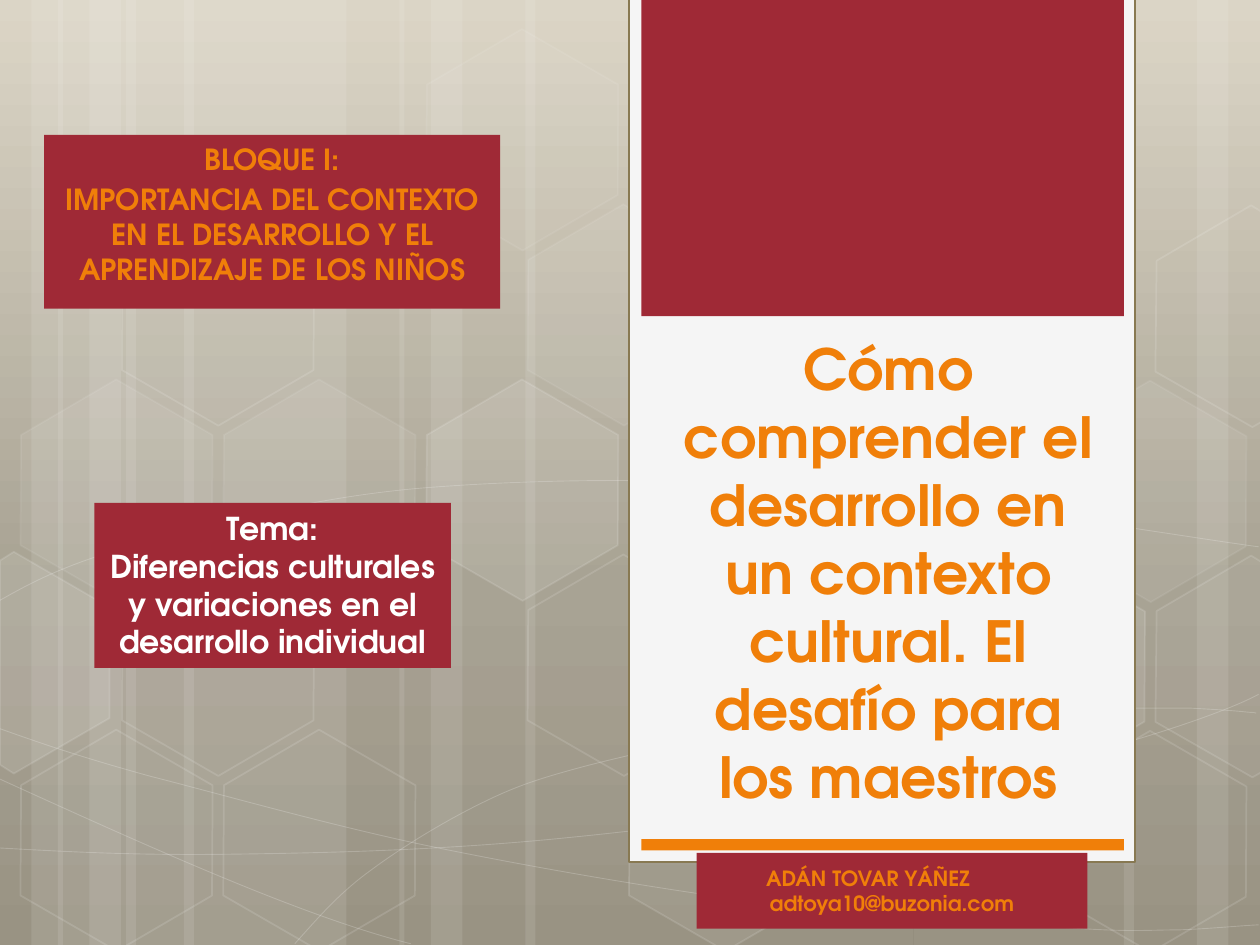
from copy import deepcopy

from pptx import Presentation
from pptx.dml.color import RGBColor
from pptx.enum.shapes import MSO_SHAPE
from pptx.enum.text import MSO_ANCHOR, PP_ALIGN
from pptx.oxml.ns import qn
from pptx.util import Inches, Pt

RECT, HEXAGON = MSO_SHAPE.RECTANGLE, MSO_SHAPE.HEXAGON
TOP, MIDDLE, BOTTOM = MSO_ANCHOR.TOP, MSO_ANCHOR.MIDDLE, MSO_ANCHOR.BOTTOM
CENTER = PP_ALIGN.CENTER
FONT = "TeX Gyre Adventor"
C = {"white": "FFFFFF", "panel": "F5F5F5", "border": "887952",
     "red": "9F2936", "orange": "F07F09"}
BACKGROUND = [(0, "D8D1C0"), (0.62, "9F9988"), (1, "8E8776")]

# (left, width) of the vertical light bars
BARS = [(1, 1.75), (0, 0.5), (0.25, 0.83), (1.46, 1.75), (0.46, 0.5), (0.71, 0.83),
        (7.25, 1.75), (9.5, 0.5), (8.92, 0.83), (4.17, 3.08), (3.17, 0.5), (3.42, 0.83)]

# Start point, then Bezier segments of two control points and an end point
CURVES = [
    [(-0.01, 6.73), (0.53, 6.76), (1.07, 6.79), (1.82, 6.78), (2.57, 6.77), (3.49, 6.75),
     (4.49, 6.65), (5.5, 6.55), (6.92, 6.36), (7.83, 6.17), (8.75, 5.98), (9.68, 5.68),
     (9.99, 5.51)],
    [(-0.01, 4.77), (0.27, 4.61), (0.56, 4.46), (1.13, 4.31), (1.7, 4.16), (2.5, 3.94),
     (3.39, 3.87), (4.28, 3.8), (5.35, 3.79), (6.45, 3.87), (7.55, 3.95), (9.39, 4.26),
     (9.99, 4.34)],
    [(-0.03, 6.17), (1.18, 6.72), (2.39, 7.27), (3.26, 7.49)],
    [(-0.01, 5.78), (0.3, 5.89), (0.61, 6), (1.19, 6.16), (1.78, 6.31), (2.65, 6.56),
     (3.48, 6.73), (4.31, 6.9), (5.37, 7.08), (6.19, 7.18), (7.02, 7.29), (7.91, 7.33),
     (8.44, 7.36), (8.97, 7.4), (9.11, 7.38), (9.36, 7.38), (9.62, 7.37), (9.8, 7.35),
     (9.99, 7.34)],
    [(2.34, 7.49), (2.52, 7.29), (2.69, 7.09), (2.94, 6.91), (3.18, 6.73), (3.51, 6.53),
     (3.79, 6.39), (4.07, 6.25), (4.24, 6.19), (4.61, 6.09), (4.98, 5.99), (5.65, 5.85),
     (6, 5.78), (6.35, 5.71), (6.4, 5.71), (6.71, 5.69), (7.02, 5.66), (7.51, 5.63),
     (7.86, 5.62), (8.2, 5.61), (8.78, 5.62), (8.78, 5.62), (9, 5.62), (9.22, 5.62),
     (9.44, 5.62), (9.63, 5.63), (9.79, 5.64), (9.88, 5.65), (9.97, 5.66), (9.94, 5.65),
     (9.97, 5.66)],
]

# (column, row, fill opacity, line opacity) on the honeycomb
LEFT_CELLS = [(2, 2, 10, 12), (2.5, 3, 0, 12), (2.5, 1, 7, 8), (2, 0, 4, 8),
              (3, 4, 6, 12), (0, 4, 0, 12), (0, 2, 7, 8), (0.5, 3, 0, 12),
              (1, 4, 0, 12), (1, 2, 7, 8), (0.5, 1, 0, 12)]
RIGHT_CELLS = [(0, 3, 10, 12), (0.5, 4, 0, 12), (0.5, 2, 7, 8)]

# Cells cut by the slide edge: (points, fill opacity)
LEFT_CUT = [(0, 4.45), (0.11, 4.38), (0.87, 4.82), (0.87, 5.7), (0.11, 6.14), (0, 6.07)]
RIGHT_CUT = [(9.18, 2.07), (9.93, 1.63), (10.01, 1.68), (10.01, 3.35), (9.94, 3.39),
             (9.17, 2.95)]
CUT_CELLS = [(LEFT_CUT, 10), ([(x, y + 2.78) for x, y in RIGHT_CUT], 4), (RIGHT_CUT, 0)]


def set_opacity(fill, percent):
    color = fill._xPr.find(qn("a:solidFill"))[0]
    alpha = color.makeelement(qn("a:alpha"), {"val": str(percent * 1000)})
    color.append(alpha)


def style(sp, fill=None, fill_alpha=100, line=None, width=1, line_alpha=100):
    sp.shadow.inherit = False
    for part, color, alpha in ((sp.fill, fill, fill_alpha),
                               (sp.line.fill, line, line_alpha)):
        if color is None or alpha == 0:
            part.background()
            continue
        part.solid()
        part.fore_color.rgb = RGBColor.from_string(color)
        if alpha < 100:
            set_opacity(part, alpha)
    if line:
        sp.line.width = Pt(width)


def add_shape(s, kind, x, y, w, h, **fmt):
    sp = s.shapes.add_shape(kind, Inches(x), Inches(y), Inches(w), Inches(h))
    style(sp, **fmt)
    return sp


def add_outline(s, points, close, **fmt):
    points = [(Inches(x), Inches(y)) for x, y in points]
    builder = s.shapes.build_freeform(*points[0])
    builder.add_line_segments(points[1:], close=close)
    sp = builder.convert_to_shape()
    style(sp, **fmt)
    return sp


def add_curve(s, points, **fmt):
    """Draw an open outline, each three points after the first being one Bezier."""
    outline = add_outline(s, points, False, **fmt)._element.find(".//" + qn("a:path"))
    lines = outline.findall(qn("a:lnTo"))
    for i in range(0, len(lines), 3):
        bezier = outline.makeelement(qn("a:cubicBezTo"), {})
        for line in lines[i:i + 3]:
            bezier.append(line[0])
            outline.remove(line)
        outline.append(bezier)


def write(sp, *lines, size, color, anchor=TOP, before=0):
    tf = sp.text_frame
    tf.word_wrap = True
    tf.vertical_anchor = anchor
    for i, text in enumerate(lines):
        p = tf.add_paragraph() if i else tf.paragraphs[0]
        p.alignment = CENTER
        p.space_before = Pt(before)
        r = p.add_run()
        r.text = text
        r.font.name, r.font.size, r.font.bold = FONT, Pt(size), True
        r.font.color.rgb = RGBColor.from_string(color)
    return tf


def add_background(s):
    fill = s.background.fill
    fill.gradient()
    fill.gradient_angle = 270
    stops = s._element.find(".//" + qn("a:gsLst"))
    stops.append(deepcopy(stops[-1]))
    for stop, (position, color) in zip(fill.gradient_stops, BACKGROUND):
        stop.position = position
        stop.color.rgb = RGBColor.from_string(color)


def add_honeycomb(s, x, y, cells):
    for col, row, fill_alpha, line_alpha in cells:
        sp = add_shape(s, HEXAGON, x + 1.61 * col, y + 1.39 * row, 1.75, 1.52,
                       fill=C["white"], fill_alpha=fill_alpha,
                       line=C["white"], line_alpha=line_alpha)
        sp.adjustments[0] = 0.285
        sp.rotation = 30


def add_decoration(s, height):
    for x, w in BARS:
        add_shape(s, RECT, x, 0, w, height, fill=C["white"], fill_alpha=10)
    for curve in CURVES:
        add_curve(s, curve, line=C["white"], width=0.5, line_alpha=20)
    add_honeycomb(s, 0.05, 0.35, LEFT_CELLS)
    add_honeycomb(s, 7.45, 0.36, RIGHT_CELLS)
    for points, alpha in CUT_CELLS:
        add_outline(s, points, True, fill=C["white"], fill_alpha=alpha,
                    line=C["white"], line_alpha=12)


def add_title_panel(s, x, y, w, h):
    add_shape(s, RECT, x, y, w, h, fill=C["panel"], line=C["border"], width=1.25)
    add_shape(s, RECT, x + 0.1, y, w - 0.19, 2.53, fill=C["red"])
    add_shape(s, RECT, x + 0.1, y + h - 0.18, w - 0.19, 0.09, fill=C["orange"])
    title = s.shapes.add_textbox(Inches(x + 0.25), Inches(y + 2.75),
                                 Inches(w - 0.4), Inches(3.75))
    write(title, "Cómo comprender el desarrollo en un contexto cultural. "
          "El desafío para los maestros", size=32.4, color=C["orange"], anchor=BOTTOM)


def add_label(s, x, y, w, h, *lines, **fmt):
    return write(add_shape(s, RECT, x, y, w, h, fill=C["red"]), *lines, **fmt)


def main():
    prs = Presentation()
    prs.slide_width, prs.slide_height = Inches(10), Inches(7.5)
    s = prs.slides.add_slide(prs.slide_layouts[6])
    add_background(s)
    add_decoration(s, 7.5)
    add_title_panel(s, 4.99, -0.02, 4.02, 6.86)
    add_label(s, 0.35, 1.07, 3.62, 1.38, "BLOQUE I:",
              "IMPORTANCIA DEL CONTEXTO EN EL DESARROLLO Y EL APRENDIZAJE DE LOS NIÑOS",
              size=16.6, color=C["orange"], before=3.3)
    author = add_label(s, 5.53, 6.77, 3.1, 0.6, "ADÁN TOVAR YÁÑEZ", "adtoya10@buzonia.com",
                       size=12, color=C["orange"], anchor=MIDDLE)
    # The name sits a little left of the address
    for p, margin in zip(author.paragraphs, (0.38, 0)):
        p._p.get_or_add_pPr().set("marR", str(Inches(margin)))
    add_label(s, 0.75, 3.99, 2.83, 1.31, "Tema:",
              "Diferencias culturales y variaciones en el desarrollo individual",
              size=18, color=C["white"])
    prs.save("out.pptx")


if __name__ == "__main__":
    main()
